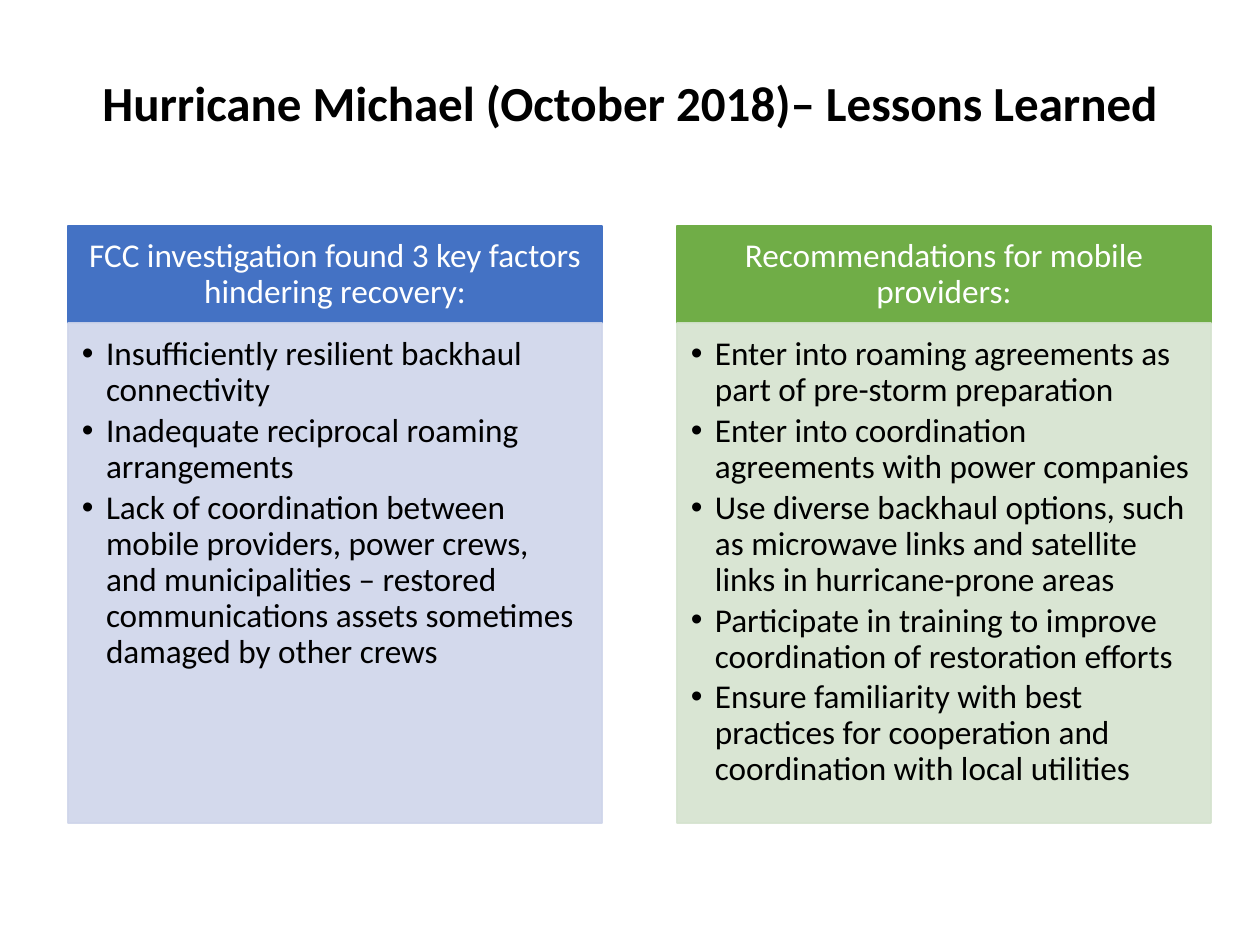
import pptx
import pptx.dml.color
import pptx.enum.text
import pptx.oxml.ns
import pptx.util
from lxml import etree

SCALE = 914400 / 126  # EMU per px
FONT = "Calibri"
COLUMN_LEFT, COLUMN_STEP, COLUMN_WIDTH = 68, 609, 534
HEADER_TOP, HEADER_HEIGHT, LIST_HEIGHT = 226, 97, 500
BULLET_INDENT = 24

TITLE = "Hurricane Michael (October 2018)– Lessons Learned"
# Heading, heading colour, list colour, list items
COLUMNS = [
    ("FCC investigation found 3 key factors hindering recovery:", "4472C4", "CFD5EA", [
        "Insufficiently resilient backhaul connectivity",
        "Inadequate reciprocal roaming arrangements",
        "Lack of coordination between mobile providers, power crews, and municipalities"
        " – restored communications assets sometimes damaged by other crews",
    ]),
    ("Recommendations for mobile providers:", "70AD47", "D5E3CF", [
        "Enter into roaming agreements as part of pre-storm preparation",
        "Enter into coordination agreements with power companies",
        "Use diverse backhaul options, such as microwave links and satellite links"
        " in hurricane-prone areas",
        "Participate in training to improve coordination of restoration efforts",
        "Ensure familiarity with best practices for cooperation and coordination"
        " with local utilities",
    ]),
]


def px(n):
    return pptx.util.Emu(round(n * SCALE))


def rgb(value):
    return pptx.dml.color.RGBColor.from_string(value)


def place(sp, left, top, width, height):
    sp.left, sp.top, sp.width, sp.height = map(px, (left, top, width, height))


def paint(sp, color, opacity=100):
    sp.fill.solid()
    sp.fill.fore_color.rgb = rgb(color)
    sp.line.fill.solid()
    sp.line.fill.fore_color.rgb = rgb(color)
    sp.line.width = pptx.util.Pt(1)
    if opacity < 100:
        qn = pptx.oxml.ns.qn
        for clr in sp._element.spPr.iter(qn("a:srgbClr")):
            etree.SubElement(clr, qn("a:alpha")).set("val", str(opacity * 1000))


def write(sp, lines, size, color, bold=False, centered=True, insets=None):
    tf = sp.text_frame
    tf.text = "\n".join(lines)
    tf.word_wrap = True
    tf.auto_size = pptx.enum.text.MSO_AUTO_SIZE.NONE
    anchor = pptx.enum.text.MSO_ANCHOR
    tf.vertical_anchor = anchor.MIDDLE if centered else anchor.TOP
    if insets:
        (tf.margin_left, tf.margin_top,
         tf.margin_right, tf.margin_bottom) = map(px, insets)
    align = pptx.enum.text.PP_ALIGN
    for p in tf.paragraphs:
        p.alignment = align.CENTER if centered else align.LEFT
        p.line_spacing = 0.9
        p.space_before = pptx.util.Pt(0)
        p.font.name, p.font.bold = FONT, bold
        p.font.size = pptx.util.Pt(size)
        p.font.color.rgb = rgb(color)


def add_heading(sp, left, text, color):
    place(sp, left, HEADER_TOP, COLUMN_WIDTH, HEADER_HEIGHT)
    paint(sp, color)
    write(sp, [text], 19, "FFFFFF", insets=(19, 10, 19, 10))


def add_list(sp, left, items, color):
    place(sp, left, HEADER_TOP + HEADER_HEIGHT, COLUMN_WIDTH, LIST_HEIGHT)
    paint(sp, color, opacity=90)
    write(sp, items, 19, "000000", centered=False, insets=(14, 14, 19, 21))
    for p in sp.text_frame.paragraphs:
        p.space_after = pptx.util.Pt(2.85)
        pPr = p._p.get_or_add_pPr()
        pPr.set("marL", str(px(BULLET_INDENT)))
        pPr.set("indent", str(-px(BULLET_INDENT)))


def main():
    prs = pptx.Presentation()
    prs.slide_width, prs.slide_height = px(1260), px(945)
    s = prs.slides.add_slide(prs.slide_layouts.get_by_name("Comparison"))

    # Title
    title, *bodies = s.placeholders
    place(title, 87, 50, 1086, 112)
    write(title, [TITLE], 28, "000000", bold=True)

    # Two columns, each a heading above a list
    for i, (heading, dark, light, items) in enumerate(COLUMNS):
        left = COLUMN_LEFT + i * COLUMN_STEP
        add_heading(bodies[2 * i], left, heading, dark)
        add_list(bodies[2 * i + 1], left, items, light)

    prs.save("out.pptx")


if __name__ == "__main__":
    main()
